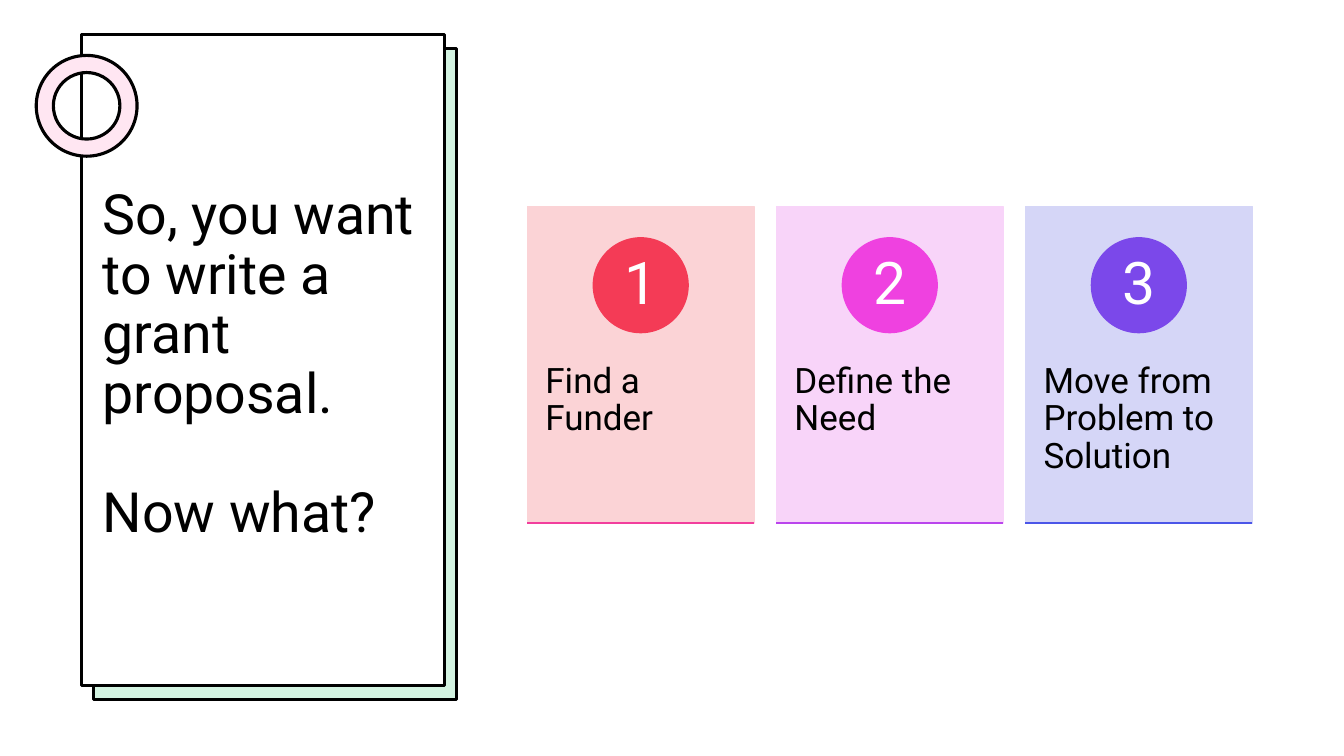
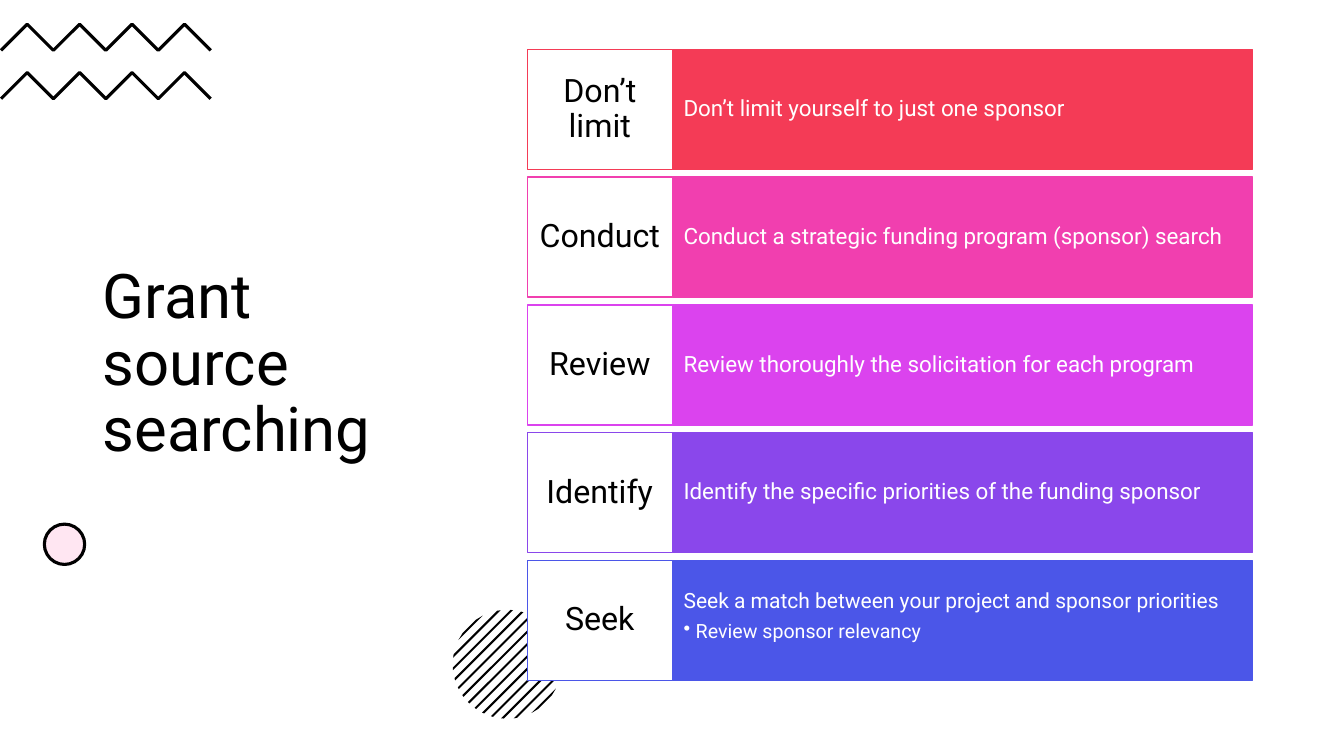
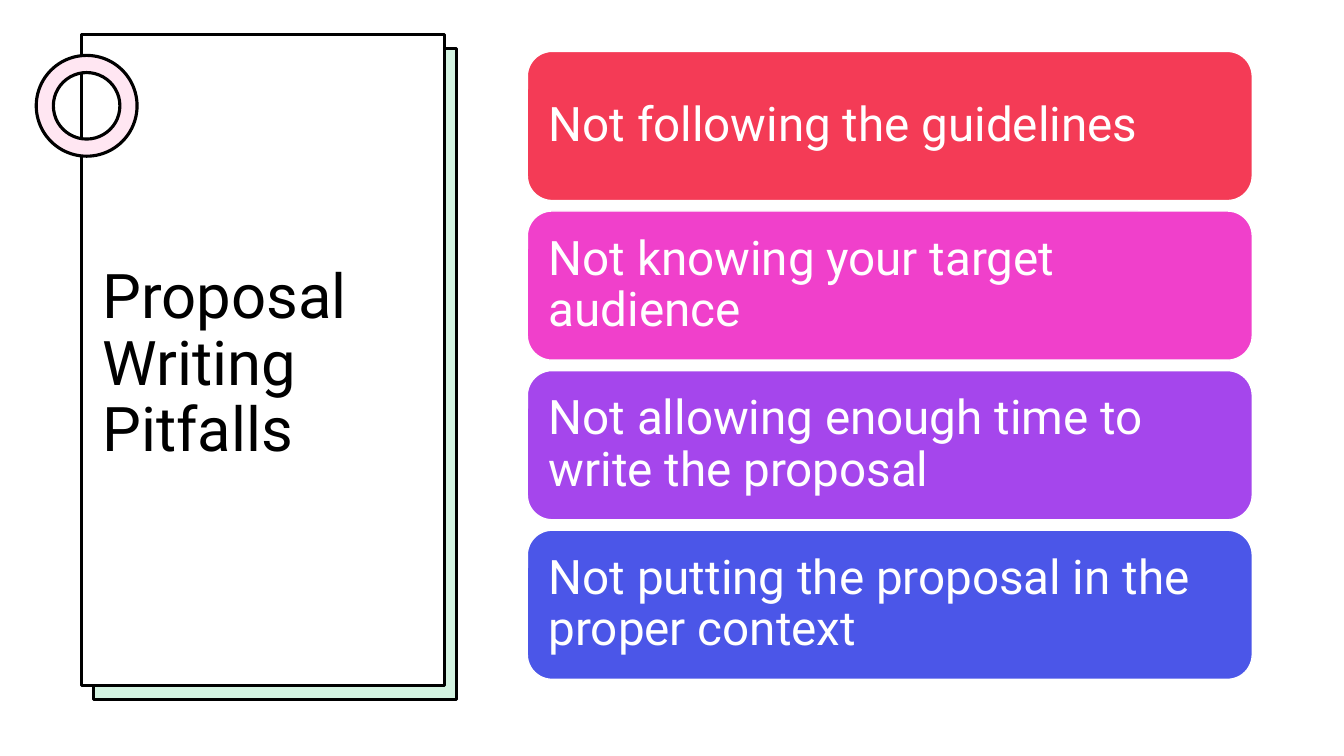
import math

import lxml.etree
import pptx
import pptx.dml.color
import pptx.enum.shapes
import pptx.enum.text
import pptx.oxml.ns
import pptx.util

Inches = pptx.util.Inches
Pt = pptx.util.Pt
SHAPES = pptx.enum.shapes.MSO_SHAPE
ALIGN = pptx.enum.text.PP_ALIGN
ANCHOR = pptx.enum.text.MSO_ANCHOR

FONT = "Roboto"
COLORS = {
    "white": "FFFFFF", "black": "000000", "mint": "D3F3E1", "blush": "FFE6F2",
    "red": "F43B56", "rose": "F23E9D", "pink": "F13FAF", "hot pink": "F040CB",
    "magenta": "EF41E0", "orchid": "DB43EE", "purple": "BA45ED",
    "violet": "A546EC", "indigo": "8A47EB", "iris": "7B48EA", "blue": "4B56E8",
    "pale red": "FBD3D6", "pale pink": "F8D4F9", "pale blue": "D5D6F7",
}
OUTLINE = 2.25
CONTENT_LEFT = 5.23
CONTENT_RIGHT = 12.42

STEPS = [
    ("Find a Funder", "pale red", "red", "rose"),
    ("Define the Need", "pale pink", "magenta", "purple"),
    ("Move from Problem to Solution", "pale blue", "iris", "blue"),
]
SEARCH_TIPS = [
    ("Don’t limit", "red", ["Don’t limit yourself to just one sponsor"]),
    ("Conduct", "pink", ["Conduct a strategic funding program (sponsor) search"]),
    ("Review", "orchid", ["Review thoroughly the solicitation for each program"]),
    ("Identify", "indigo", ["Identify the specific priorities of the funding sponsor"]),
    ("Seek", "blue", ["Seek a match between your project and sponsor priorities",
                      "Review sponsor relevancy"]),
]
PITFALLS = [
    ("Not following the guidelines", "red"),
    ("Not knowing your target audience", "hot pink"),
    ("Not allowing enough time to write the proposal", "violet"),
    ("Not putting the proposal in the proper context", "blue"),
]


def rgb(name):
    return pptx.dml.color.RGBColor.from_string(COLORS[name])


def spread(start, end, size, count):
    """Starts of equal items that fill the range from start to end."""
    step = (end - start - size) / (count - 1)
    return [start + step * index for index in range(count)]


def paint(shape, fill, line, width):
    """Fill and outline a shape; None leaves that part out."""
    shape.shadow.inherit = False
    if fill:
        shape.fill.solid()
        shape.fill.fore_color.rgb = rgb(fill)
    else:
        shape.fill.background()
    if line:
        shape.line.color.rgb = rgb(line)
        shape.line.width = Pt(width)
    else:
        shape.line.fill.background()


def add_block(page, kind, at, fill, line, width=1):
    shape = page.shapes.add_shape(kind, *map(Inches, at))
    paint(shape, fill, line, width)
    return shape


def add_outline(page, points, close, fill=None, line=None, width=1):
    corners = [(Inches(x), Inches(y)) for x, y in points]
    builder = page.shapes.build_freeform(*corners[0], scale=1.0)
    builder.add_line_segments(corners[1:], close=close)
    paint(builder.convert_to_shape(), fill, line, width)


def frame_text(box, insets, anchor=ANCHOR.MIDDLE):
    """Set insets (left, top, right, bottom) and return the text frame."""
    frame = box.text_frame
    frame.word_wrap = True
    frame.vertical_anchor = anchor
    frame.margin_left, frame.margin_top, frame.margin_right, frame.margin_bottom = (
        map(Inches, insets))
    return frame


def write(para, text, size, color, align=ALIGN.LEFT):
    para.alignment = align
    para.line_spacing = 0.9
    span = para.add_run()
    span.text = text
    span.font.name = FONT
    span.font.size = Pt(size)
    span.font.color.rgb = rgb(color)


def add_bullet(para, indent):
    properties = para._p.get_or_add_pPr()
    properties.set("marL", str(Inches(indent)))
    properties.set("indent", str(-Inches(indent)))
    bullet = lxml.etree.SubElement(properties, pptx.oxml.ns.qn("a:buChar"))
    bullet.set("char", "•")


def add_title(page, lines, size=44):
    box = page.shapes.add_textbox(*map(Inches, (0.92, 1.31, 3.4, 4.63)))
    frame = frame_text(box, (0.1, 0.05, 0.1, 0.05))
    for index, text in enumerate(lines):
        para = frame.add_paragraph() if index else frame.paragraphs[0]
        write(para, text, size, "black")
        if index:
            para.space_before = Pt(42)


def add_title_card(page):
    """Outlined card with an offset mint backing and a ring on its edge."""
    for left, top, fill in ((0.93, 0.48, "mint"), (0.81, 0.34, "white")):
        add_block(page, SHAPES.RECTANGLE, (left, top, 3.6, 6.46), fill, "black", OUTLINE)
    ring = add_block(page, SHAPES.DONUT, (0.36, 0.55, 1, 1), "blush", "black", OUTLINE)
    ring.adjustments[0] = 0.17


def add_rule(page, left, right, y, color):
    rule = page.shapes.add_connector(
        pptx.enum.shapes.MSO_CONNECTOR.STRAIGHT, *map(Inches, (left, y, right, y)))
    rule.line.color.rgb = rgb(color)
    rule.line.width = Pt(1)
    lxml.etree.SubElement(rule._element.spPr, pptx.oxml.ns.qn("a:effectLst"))


def add_step_card(page, left, number, step):
    text, fill, badge_color, rule_color = step
    top, width, height, badge_size = 2.05, 2.25, 3.14, 0.94
    card = add_block(page, SHAPES.RECTANGLE, (left, top, width, height), fill, fill)
    frame = frame_text(card, (0.18, 1.55, 0.18, 0.36), ANCHOR.TOP)
    write(frame.paragraphs[0], text, 25, "black")
    badge_left = left + (width - badge_size) / 2
    badge = add_block(page, SHAPES.OVAL, (badge_left, 2.36, badge_size, badge_size),
                      badge_color, badge_color)
    frame = frame_text(badge, (0.07, 0.01, 0.07, 0.01))
    write(frame.paragraphs[0], str(number), 42, "white", ALIGN.CENTER)
    add_rule(page, left, left + width, top + height, rule_color)


def add_zigzag(page, top):
    points = [(0.01 + 0.26 * index, top + (0 if index % 2 else 0.26)) for index in range(9)]
    add_outline(page, points, close=False, line="black", width=OUTLINE)


def add_striped_disc(page, center_x, center_y, radius):
    """Disc made of 13 rising diagonal stripes."""
    def chord(offset):
        half = math.sqrt(radius ** 2 - offset ** 2)
        return [(center_x + (offset + side * half) / math.sqrt(2),
                 center_y + (offset - side * half) / math.sqrt(2)) for side in (1, -1)]

    for index in range(-6, 7):
        offset = 0.087 * index
        points = chord(offset - 0.01) + chord(offset + 0.01)[::-1]
        add_outline(page, points, close=True, fill="black")


def add_tip_row(page, top, height, tip):
    label, color, lines = tip
    split = 6.67
    band = add_block(page, SHAPES.RECTANGLE, (split, top, CONTENT_RIGHT - split, height),
                     color, color)
    detailed = len(lines) > 1
    frame = frame_text(band, (0.11, 0.3, 0.11, 0.3),
                       ANCHOR.TOP if detailed else ANCHOR.MIDDLE)
    write(frame.paragraphs[0], lines[0], 15 if detailed else 16, "white")
    for text in lines[1:]:
        para = frame.add_paragraph()
        add_bullet(para, 0.12)
        write(para, text, 14, "white")
        para.space_before = Pt(6)
    cell = add_block(page, SHAPES.RECTANGLE, (CONTENT_LEFT, top, split - CONTENT_LEFT, height),
                     "white", color)
    frame = frame_text(cell, (0.08, 0.12, 0.08, 0.12))
    write(frame.paragraphs[0], label, 23, "black", ALIGN.CENTER)


def build_steps(page):
    add_title_card(page)
    add_title(page, ["So, you want to write a grant proposal.", "Now what?"], 39.6)
    lefts = spread(CONTENT_LEFT, CONTENT_RIGHT, 2.25, len(STEPS))
    for number, (left, step) in enumerate(zip(lefts, STEPS), 1):
        add_step_card(page, left, number, step)


def build_search(page):
    add_title(page, ["Grant source searching"])
    for top in (0.24, 0.72):
        add_zigzag(page, top)
    add_block(page, SHAPES.OVAL, (0.44, 5.2, 0.4, 0.4), "blush", "black", OUTLINE)
    add_striped_disc(page, 5.03, 6.59, 0.54)
    height = 1.19
    for top, tip in zip(spread(0.49, 6.75, height, len(SEARCH_TIPS)), SEARCH_TIPS):
        add_tip_row(page, top, height, tip)


def build_pitfalls(page):
    add_title_card(page)
    add_title(page, ["Proposal Writing Pitfalls"])
    height = 1.48
    for top, (text, color) in zip(spread(0.51, 6.74, height, len(PITFALLS)), PITFALLS):
        bar = add_block(page, SHAPES.ROUNDED_RECTANGLE,
                        (CONTENT_LEFT, top, CONTENT_RIGHT - CONTENT_LEFT, height),
                        color, "white")
        frame = frame_text(bar, (0.14, 0.14, 0.14, 0.14))
        write(frame.paragraphs[0], text, 34, "white")


def main():
    deck = pptx.Presentation()
    deck.slide_width, deck.slide_height = Inches(13.33), Inches(7.5)
    for build in (build_steps, build_search, build_pitfalls):
        build(deck.slides.add_slide(deck.slide_layouts[6]))
    deck.save("out.pptx")


if __name__ == "__main__":
    main()
